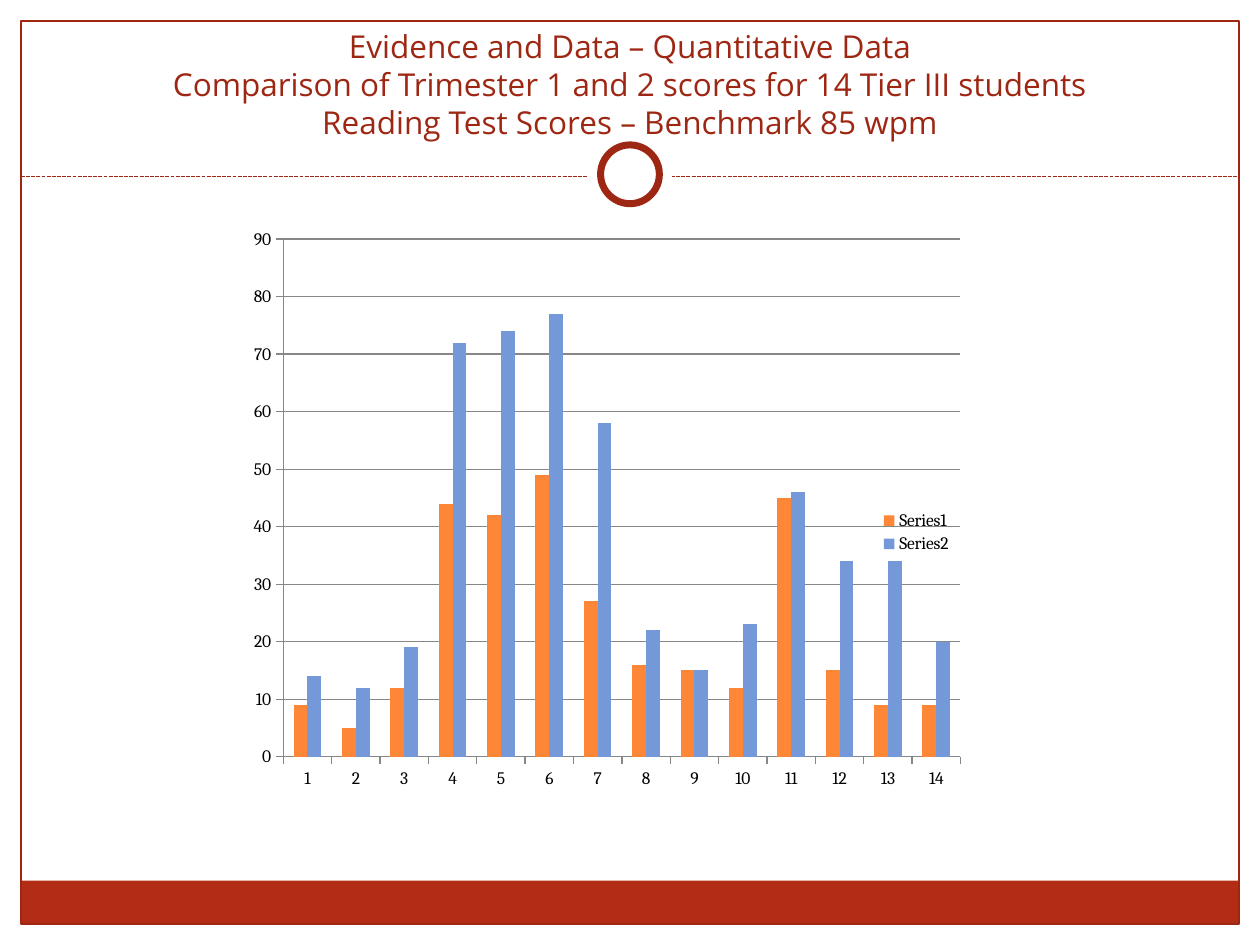
"""Build a slide comparing two trimesters of reading scores in a column chart."""
import lxml.etree
import pptx
import pptx.chart.data
import pptx.dml.color
import pptx.enum.chart
import pptx.enum.dml
import pptx.enum.shapes
import pptx.enum.text
import pptx.oxml
import pptx.oxml.ns
import pptx.util

THEME = {
    "paper": "FFFFFF", "band": "B32C16", "accent": "9E2713", "grid": "878787",
    "ink": "000000", "series": ("FE8637", "7598D9"),
    "title_font": "Open Sans", "chart_font": "Cambria",
    "title_size": 18, "chart_size": 10, "hairline": 0.75, "ring": 4,
}
COLUMNS, ROWS = 60, 45
SHAPE = pptx.enum.shapes.MSO_SHAPE

presentation = pptx.Presentation()
presentation.slide_width = pptx.util.Inches(10)
presentation.slide_height = pptx.util.Inches(7.5)
slide = presentation.slides.add_slide(presentation.slide_layouts[6])


def grid(*cells):
    """Turn alternating column and row counts into slide lengths."""
    units = (presentation.slide_width / COLUMNS, presentation.slide_height / ROWS)
    return [round(cell * units[index % 2]) for index, cell in enumerate(cells)]


def color(name):
    """Return the RGB value of a theme entry or hex string."""
    return pptx.dml.color.RGBColor.from_string(THEME.get(name, name))


frame_parts = (
    (SHAPE.RECTANGLE, (0, 0, 60, 9.1), "paper", None),
    (SHAPE.RECTANGLE, (0, 0, 1, 45), "paper", None),
    (SHAPE.RECTANGLE, (59, 0, 1, 45), "paper", None),
    (SHAPE.RECTANGLE, (1, 41.94, 58, 2.04), "band", None),
    (SHAPE.RECTANGLE, (1, 1, 58, 43), None, "hairline"),
    (None, (1, 8.4, 59, 8.4), None, "hairline"),
    (SHAPE.OVAL, (28, 6.3, 4, 4), "paper", None),
    (SHAPE.OVAL, (28.6, 6.9, 2.8, 2.8), "paper", "ring"),
)
for preset, cells, fill, weight in frame_parts:
    if preset is None:
        shape = slide.shapes.add_connector(pptx.enum.shapes.MSO_CONNECTOR.STRAIGHT, *grid(*cells))
        shape.line.dash_style = pptx.enum.dml.MSO_LINE.SQUARE_DOT
        lxml.etree.SubElement(shape.element.spPr, pptx.oxml.ns.qn("a:effectLst"))
    else:
        shape = slide.shapes.add_shape(preset, *grid(*cells))
        shape.shadow.inherit = False
        if fill:
            shape.fill.solid()
            shape.fill.fore_color.rgb = color(fill)
        else:
            shape.fill.background()
    if weight:
        shape.line.color.rgb = color("accent")
        shape.line.width = pptx.util.Pt(THEME[weight])
    else:
        shape.line.fill.background()

title_frame = slide.shapes.add_textbox(*grid(2, -1, 56, 8)).text_frame
title_frame.text = "\v".join((
    "Evidence and Data – Quantitative Data",
    "Comparison of Trimester 1 and 2 scores for 14 Tier III students",
    "Reading Test Scores – Benchmark 85 wpm",
))
title_paragraph = title_frame.paragraphs[0]
title_paragraph.font.color.rgb = color("accent")

scores = pptx.chart.data.CategoryChartData()
scores.categories = [str(student) for student in range(1, 15)]
scores.add_series("Series1", (9, 5, 12, 44, 42, 49, 27, 16, 15, 12, 45, 15, 9, 9))
scores.add_series("Series2", (14, 12, 19, 72, 74, 77, 58, 22, 15, 23, 46, 34, 34, 20))
chart = slide.shapes.add_chart(
    pptx.enum.chart.XL_CHART_TYPE.COLUMN_CLUSTERED, *grid(3, 10.5, 43, 29.7), scores
).chart
chart.has_title = False
chart.has_legend = True
chart.font.color.rgb = color("ink")
plot = chart.plots[0]
tick_mark = pptx.enum.chart.XL_TICK_MARK.OUTSIDE

formats = (
    (title_frame, {"word_wrap": True, "vertical_anchor": pptx.enum.text.MSO_ANCHOR.BOTTOM}),
    (title_paragraph, {"alignment": pptx.enum.text.PP_ALIGN.CENTER}),
    (title_paragraph.font, {"name": THEME["title_font"], "size": pptx.util.Pt(THEME["title_size"])}),
    (chart.font, {"name": THEME["chart_font"], "size": pptx.util.Pt(THEME["chart_size"])}),
    (chart.legend, {"position": pptx.enum.chart.XL_LEGEND_POSITION.RIGHT, "include_in_layout": True}),
    (plot, {"gap_width": 150, "overlap": 0, "vary_by_categories": False}),
    (chart.category_axis, {"major_tick_mark": tick_mark}),
    (chart.value_axis, {"major_tick_mark": tick_mark, "has_major_gridlines": True,
                        "minimum_scale": 0, "maximum_scale": 90, "major_unit": 10}),
)
for target, values in formats:
    for attribute, value in values.items():
        setattr(target, attribute, value)

for series, fill in zip(plot.series, THEME["series"]):
    series.format.fill.solid()
    series.format.fill.fore_color.rgb = color(fill)

for part in (chart.category_axis, chart.value_axis, chart.value_axis.major_gridlines):
    part.format.line.color.rgb = color("grid")
    part.format.line.width = pptx.util.Pt(THEME["hairline"])

plot_area = chart.element.chart.plotArea
legend = chart.legend._element
for parent, inner, box in (
    (plot_area, '<c:layoutTarget val="inner"/>', (7 / 28.7, 0.03, 0.75, 0.83)),
    (legend, "", (0.9, 0.46, 0.09, 0.08)),
):
    for layout in parent.findall(pptx.oxml.ns.qn("c:layout")):
        parent.remove(layout)
    modes = '<c:xMode val="edge"/><c:yMode val="edge"/>'
    sizes = "".join(f'<c:{key} val="{value:.3f}"/>' for key, value in zip("xywh", box))
    layout = pptx.oxml.parse_xml(
        f'<c:layout {pptx.oxml.ns.nsdecls("c")}><c:manualLayout>'
        f"{inner}{modes}{sizes}</c:manualLayout></c:layout>"
    )
    parent.insert(0 if parent is plot_area else 1, layout)

presentation.save("out.pptx")
